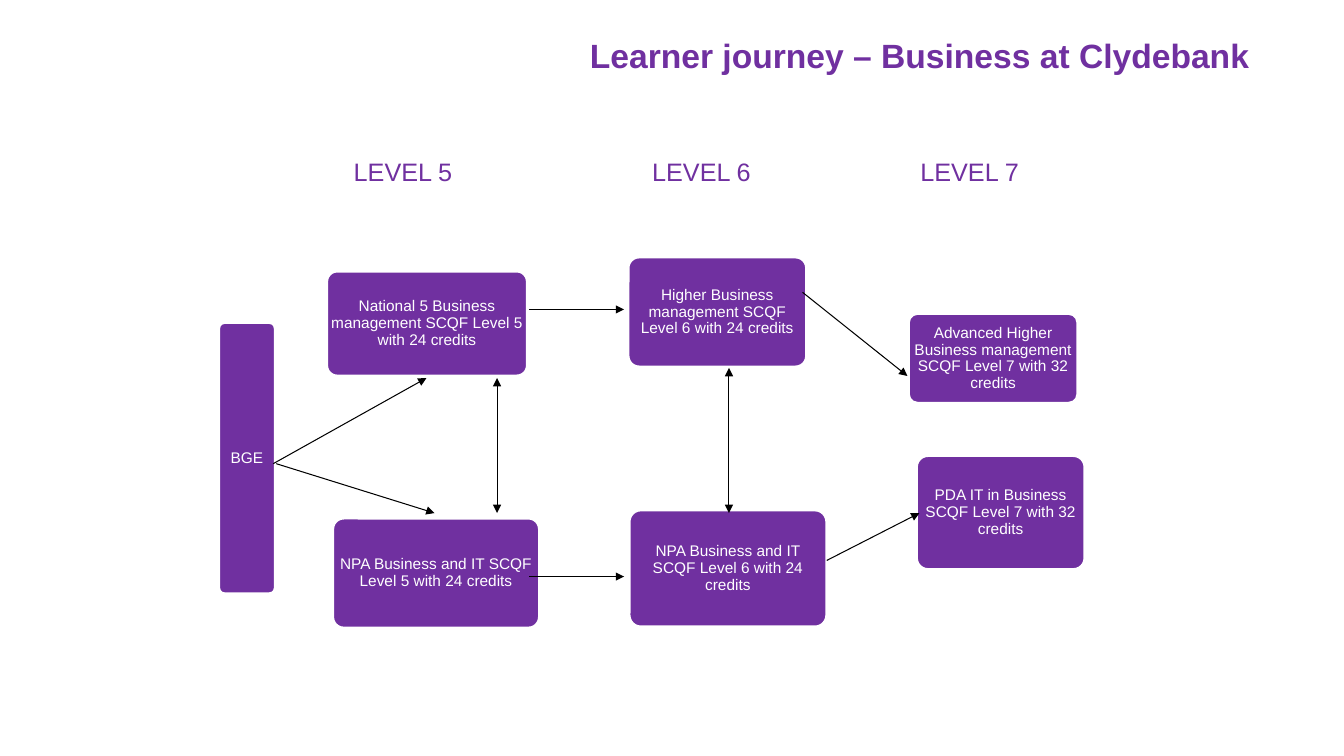
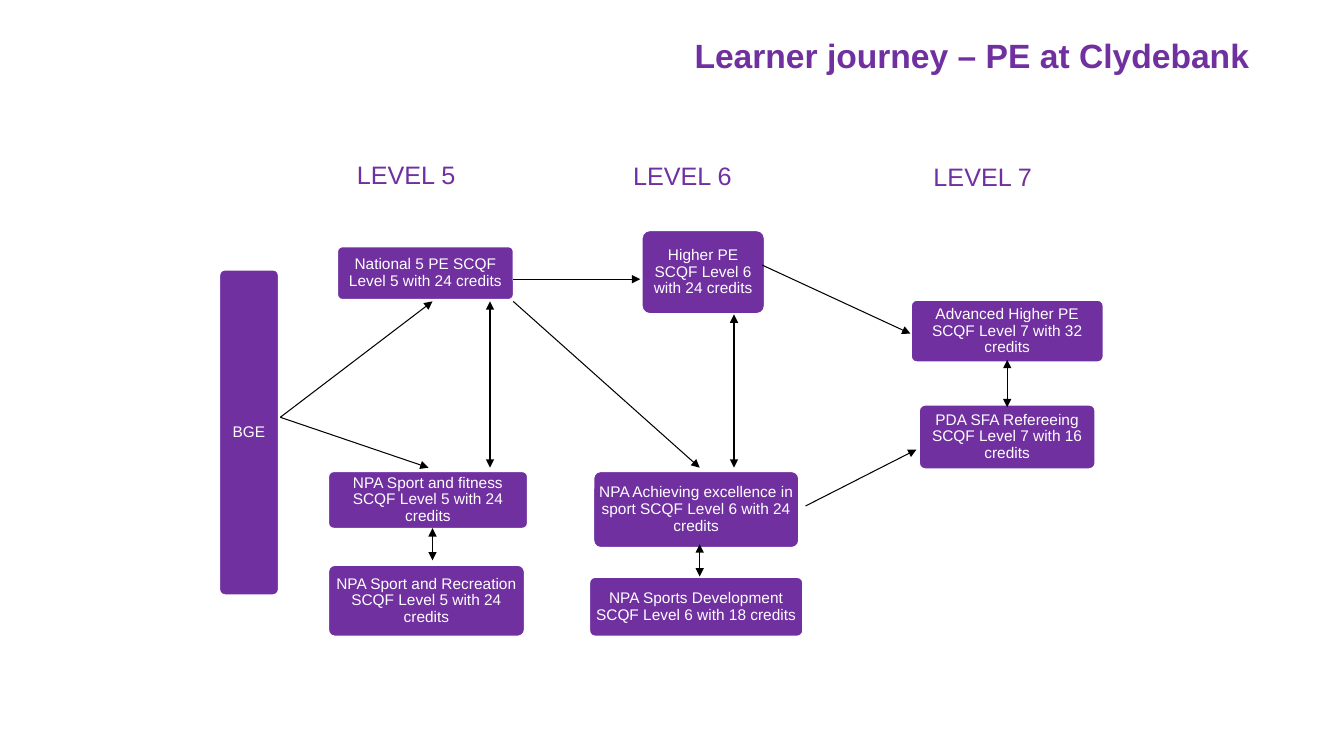
"""Build the learner journey slides."""
from dataclasses import dataclass

from pptx import Presentation
from pptx import util as u
from pptx.dml import color
from pptx.enum import shapes, text
from pptx.oxml import ns, xmlchemy

PX = 9144


@dataclass(frozen=True)
class Theme:
    """Colours, type sizes and line widths shared by the slides."""
    font: str = "Arial"
    main: str = "7030A0"
    pale: str = "FFFFFF"
    ink: str = "000000"
    head: int = 24
    level: int = 18
    node: int = 11
    edge: float = 2
    link: float = 0.75


THEME = Theme()
SIZE = (1333, 750)
HEAD = (67, 30, 1200, 125)
BODY = (200, 150, 900, 500)

BUSINESS = {
    "title": "Learner journey – Business at Clydebank",
    "levels": [(141, 0), (437, 0), (703, 0)],
    "nodes": [
        ("BGE", (17, 170, 56, 269)),
        ("National 5 Business management SCQF Level 5 with 24 credits", (124, 119, 199, 104)),
        ("Higher Business management SCQF Level 6 with 24 credits", (423, 105, 177, 109)),
        ("NPA Business and IT SCQF Level 6 with 24 credits", (424, 356, 196, 116)),
        ("NPA Business and IT SCQF Level 5 with 24 credits", (130, 364, 205, 109)),
        ("Advanced Higher Business management SCQF Level 7 with 32 credits", (701, 161, 168, 89)),
        ("PDA IT in Business SCQF Level 7 with 32 credits", (709, 302, 167, 113)),
    ],
    "one_way": [
        (71, 310, 223, 225), (74, 310, 231, 359), (596, 140, 700, 223),
        (325, 157, 419, 157), (325, 422, 419, 422), (620, 406, 712, 359),
    ],
    "two_way": [(293, 225, 293, 359), (523, 215, 523, 359)],
}

SPORT = {
    "title": "Learner journey – PE at Clydebank",
    "levels": [(144, 3), (418, 4), (716, 5)],
    "nodes": [
        ("BGE", (17, 117, 60, 324)),
        ("National 5 PE SCQF Level 5 with 24 credits", (134, 94, 176, 54)),
        ("NPA Achieving excellence in sport SCQF Level 6 with 24 credits", (388, 317, 205, 77)),
        ("Higher PE SCQF Level 6 with 24 credits", (436, 78, 123, 84)),
        ("PDA SFA Refereeing SCQF Level 7 with 16 credits", (711, 251, 176, 65)),
        ("NPA Sports Development SCQF Level 6 with 18 credits", (384, 422, 213, 60)),
        ("NPA Sport and fitness SCQF Level 5 with 24 credits", (125, 317, 199, 58)),
        ("Advanced Higher PE SCQF Level 7 with 32 credits", (703, 147, 192, 63)),
        ("NPA Sport and Recreation SCQF Level 5 with 24 credits", (125, 410, 196, 72)),
    ],
    "one_way": [
        (78, 264, 229, 149), (78, 264, 225, 314), (309, 127, 435, 127),
        (309, 149, 494, 314), (599, 352, 709, 296), (556, 113, 703, 181),
    ],
    "two_way": [
        (229, 374, 229, 406), (286, 149, 286, 314), (494, 390, 494, 422),
        (799, 207, 799, 254), (528, 162, 528, 314),
    ],
}


def emu(*vals):
    """Turn px into EMU."""
    return [u.Emu(val * PX) for val in vals]


def rgb(code):
    """Return a colour from its hex code."""
    return color.RGBColor.from_string(code)


def write(frame, words, size, tint, align, bold=False):
    """Fill a text frame with one styled paragraph."""
    frame.word_wrap = True
    frame.text = words
    para = frame.paragraphs[0]
    para.alignment = align
    font = para.runs[0].font
    font.name, font.size, font.bold = THEME.font, u.Pt(size), bold
    font.color.rgb = rgb(tint)
    return para


def header(slide, words, box):
    """Place the right-aligned title in its box."""
    title = slide.shapes.title
    title.left, title.top, title.width, title.height = emu(*box)
    frame = title.text_frame
    frame.auto_size = text.MSO_AUTO_SIZE.NONE
    frame.vertical_anchor = text.MSO_ANCHOR.TOP
    frame.margin_right = u.Emu(28 * PX)
    write(frame, words, THEME.head, THEME.main, text.PP_ALIGN.RIGHT, True)


def level(slide, words, left, top):
    """Add the heading of one level."""
    label = slide.shapes.add_textbox(*emu(left, top, 165, 40))
    write(label.text_frame, words, THEME.level, THEME.main, text.PP_ALIGN.LEFT)


def node(slide, words, box):
    """Add one rounded course box."""
    shape = slide.shapes.add_shape(shapes.MSO_SHAPE.ROUNDED_RECTANGLE, *emu(*box))
    shape.adjustments[0] = 0.1
    shape.shadow.inherit = False
    shape.fill.solid()
    shape.fill.fore_color.rgb = rgb(THEME.main)
    shape.line.color.rgb = rgb(THEME.pale)
    shape.line.width = u.Pt(THEME.edge)
    frame = shape.text_frame
    frame.margin_left = frame.margin_right = u.Emu(PX)
    frame.margin_top = frame.margin_bottom = u.Emu(PX)
    frame.vertical_anchor = text.MSO_ANCHOR.MIDDLE
    para = write(frame, words, THEME.node, THEME.pale, text.PP_ALIGN.CENTER)
    para.line_spacing = 0.9


def link(slide, ends, tips):
    """Add one line with arrowheads at the given tips."""
    line = slide.shapes.add_connector(shapes.MSO_CONNECTOR.STRAIGHT, *emu(*ends))
    line.line.color.rgb = rgb(THEME.ink)
    line.line.width = u.Pt(THEME.link)
    props = line.element.find(ns.qn("p:spPr"))
    stroke = props.find(ns.qn("a:ln"))
    for tip in tips:
        mark = xmlchemy.OxmlElement(tip)
        mark.set("type", "triangle")
        stroke.append(mark)
    props.append(xmlchemy.OxmlElement("a:effectLst"))


def journey(slide, plan, box):
    """Place levels, courses and links relative to a box."""
    left, top = box[:2]
    for rank, (x, y) in enumerate(plan["levels"], 5):
        level(slide, f"LEVEL {rank}", left + x, top + y)
    for words, (x, y, wide, high) in plan["nodes"]:
        node(slide, words, (left + x, top + y, wide, high))
    heads = {"one_way": ["a:tailEnd"], "two_way": ["a:headEnd", "a:tailEnd"]}
    for kind, tips in heads.items():
        for x, y, to_x, to_y in plan[kind]:
            link(slide, (left + x, top + y, left + to_x, top + to_y), tips)


def main():
    """Build and save the deck."""
    deck = Presentation()
    deck.slide_width, deck.slide_height = emu(*SIZE)
    for plan in (BUSINESS, SPORT):
        slide = deck.slides.add_slide(deck.slide_layouts[5])
        header(slide, plan["title"], HEAD)
        journey(slide, plan, BODY)
    deck.save("out.pptx")


if __name__ == "__main__":
    main()
